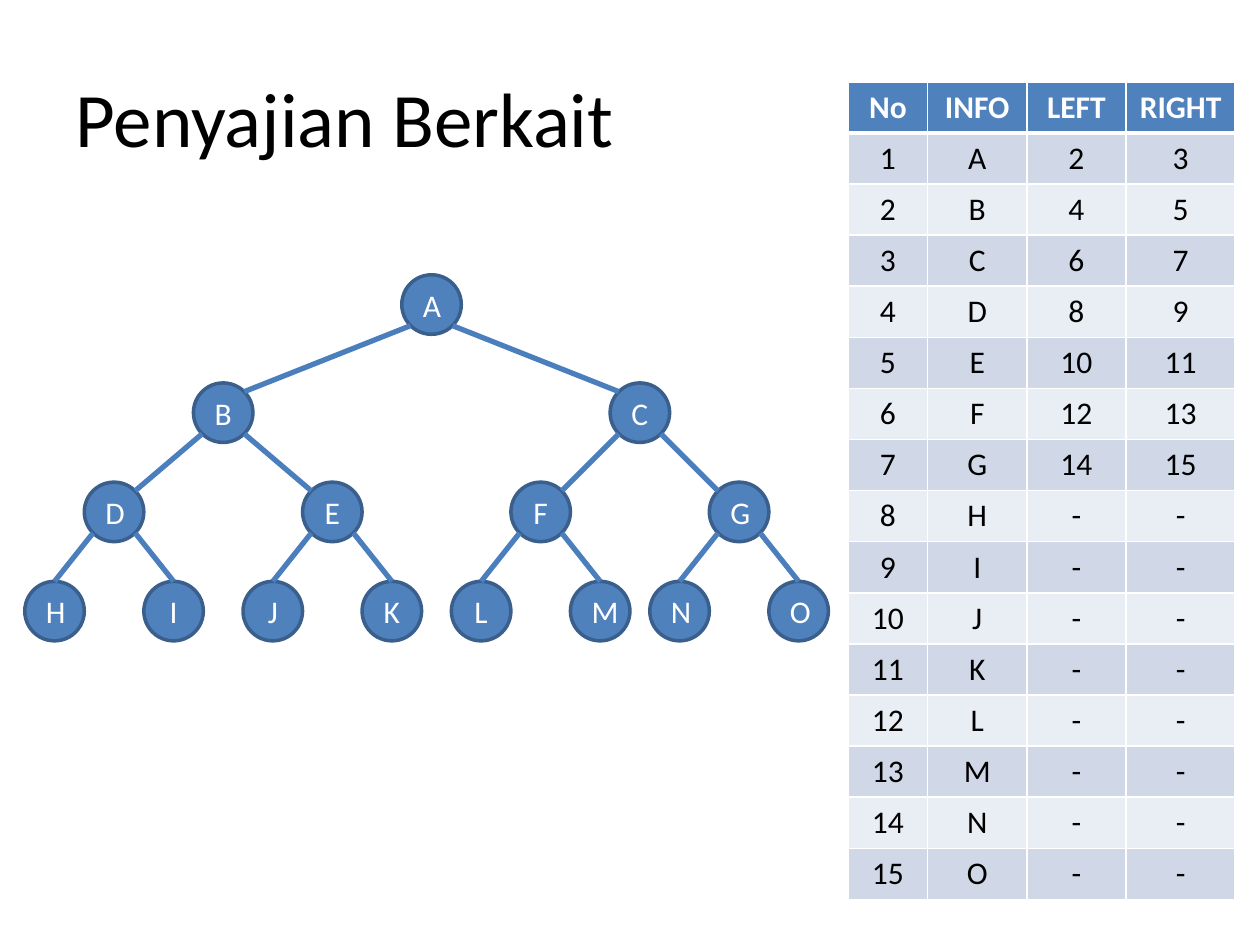
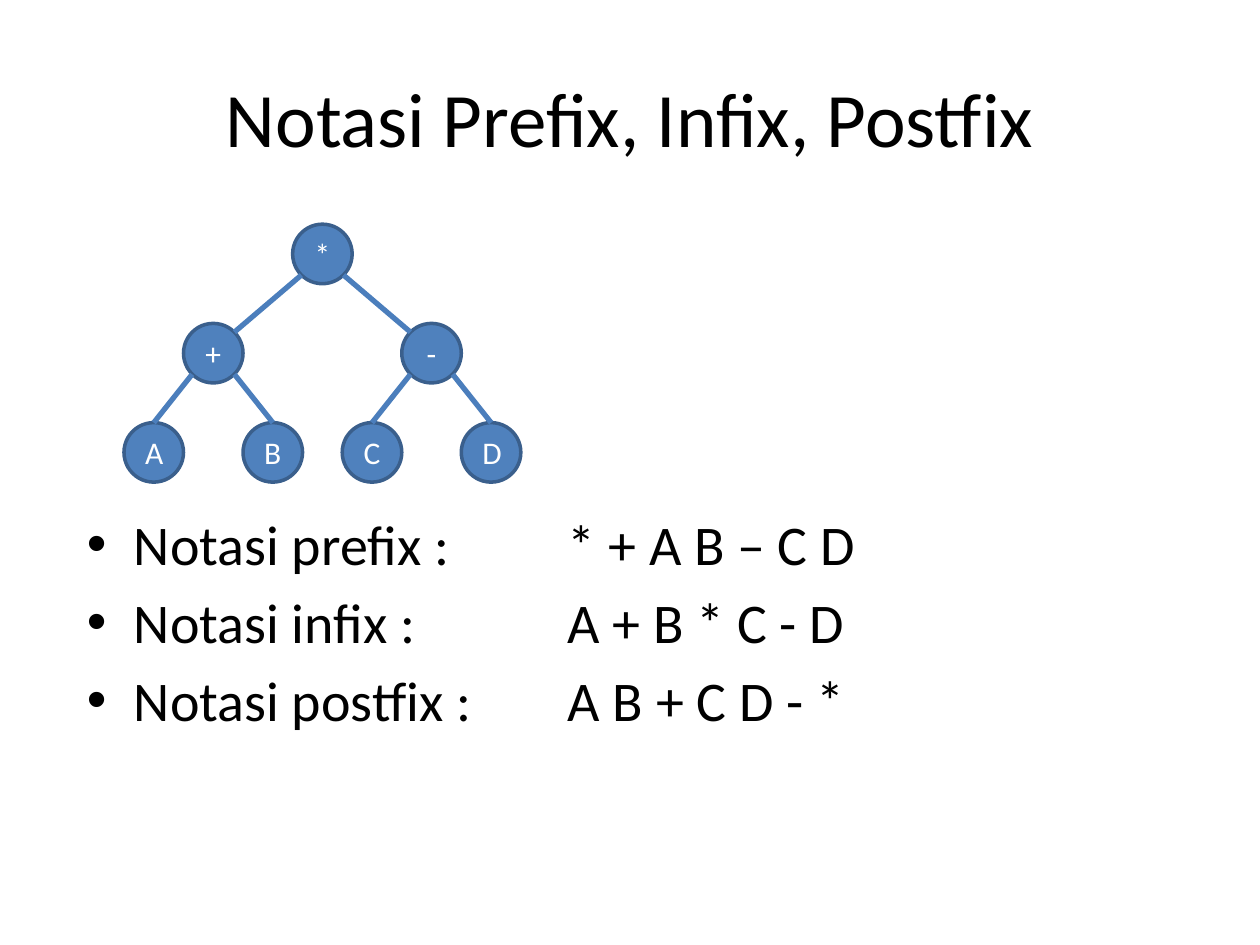
from dataclasses import dataclass

from lxml import etree
from pptx import Presentation
from pptx.dml.color import RGBColor
from pptx.enum.shapes import MSO_CONNECTOR, MSO_SHAPE
from pptx.enum.text import MSO_ANCHOR, PP_ALIGN
from pptx.oxml.ns import qn
from pptx.util import Cm, Pt

CENTER, LEFT = PP_ALIGN.CENTER, PP_ALIGN.LEFT
MIDDLE = MSO_ANCHOR.MIDDLE
ELLIPSE = MSO_SHAPE.OVAL
STRAIGHT = MSO_CONNECTOR.STRAIGHT
TITLE_ONLY = 5


@dataclass(frozen=True)
class Theme:
    font: str = "Calibri"
    ink: str = "000000"
    paper: str = "FFFFFF"
    accent: str = "4F81BD"
    node_outline: str = "3A5F8C"
    edge: str = "4B7EBC"
    row_bands: tuple = ("D0D8E8", "E9EDF4")
    title_size: int = 44
    body_size: int = 32
    label_size: int = 18


THEME = Theme()
NODE_SIZE = 1.2
LEVEL_GAP = 2
SIBLING_GAP = 2.4
DIAGONAL = NODE_SIZE / 2 * 0.71


def rgb(color):
    return RGBColor.from_string(color)


def style_text(paragraph, size, color, align=LEFT, bold=False):
    paragraph.alignment = align
    for run in paragraph.runs:
        run.font.name = THEME.font
        run.font.size = Pt(size)
        run.font.bold = bold
        run.font.color.rgb = rgb(color)


def add_titled_slide(deck, heading, align):
    slide = deck.slides.add_slide(deck.slide_layouts[TITLE_ONLY])
    title = slide.shapes.title
    title.left, title.top = Cm(1.27), Cm(0.76)
    title.width, title.height = Cm(22.86), Cm(3.18)
    title.text_frame.text = heading
    title.text_frame.vertical_anchor = MIDDLE
    style_text(title.text_frame.paragraphs[0], THEME.title_size, THEME.ink, align)
    return slide


def add_node(tree, label, x, y):
    """Draw a labelled circle centred on (x, y)."""
    radius = NODE_SIZE / 2
    node = tree.shapes.add_shape(
        ELLIPSE, Cm(x - radius), Cm(y - radius), Cm(NODE_SIZE), Cm(NODE_SIZE))
    node.shadow.inherit = False
    node.fill.solid()
    node.fill.fore_color.rgb = rgb(THEME.accent)
    node.line.color.rgb = rgb(THEME.node_outline)
    node.line.width = Pt(2)
    node.text_frame.text = label
    style_text(node.text_frame.paragraphs[0], THEME.label_size, THEME.paper, CENTER)


def add_edge(tree, parent, child, child_is_leaf):
    """Join the parent's lower diagonal to the child's top or upper diagonal."""
    (parent_x, parent_y), (child_x, child_y) = parent, child
    side = DIAGONAL if child_x > parent_x else -DIAGONAL
    if child_is_leaf:
        end_x, end_y = child_x, child_y - NODE_SIZE / 2
    else:
        end_x, end_y = child_x - side, child_y - DIAGONAL
    edge = tree.shapes.add_connector(
        STRAIGHT, Cm(end_x), Cm(end_y), Cm(parent_x + side), Cm(parent_y + DIAGONAL))
    edge.line.color.rgb = rgb(THEME.edge)
    edge.line.width = Pt(3)
    etree.SubElement(edge._element.spPr, qn("a:effectLst"))


def add_tree(slide, labels, leaf_pair_starts, level_heights):
    """Draw a full binary tree; labels run level by level from the root.

    leaf_pair_starts holds the centre of each left leaf; every parent
    stands midway between its two children.
    """
    leaf_xs = [x + step for x in leaf_pair_starts for step in (0, SIBLING_GAP)]
    levels = [leaf_xs]
    while len(levels[0]) > 1:
        below = levels[0]
        levels.insert(0, [sum(pair) / 2 for pair in zip(below[::2], below[1::2])])
    centers = [(x, y) for xs, y in zip(levels, level_heights) for x in xs]

    tree = slide.shapes.add_group_shape()
    first_leaf = len(labels) - len(leaf_xs)
    for index, (label, center) in enumerate(zip(labels, centers)):
        add_node(tree, label, *center)
        if index:
            add_edge(tree, centers[(index - 1) // 2], center, index >= first_leaf)


def set_border(cell, side, points):
    line = etree.SubElement(
        cell._tc.get_or_add_tcPr(), qn(f"a:ln{side}"), w=str(Pt(points)))
    fill = etree.SubElement(line, qn("a:solidFill"))
    etree.SubElement(fill, qn("a:srgbClr"), val=THEME.paper)


def add_link_table(slide, rows, left, top, column_widths, row_height):
    table = slide.shapes.add_table(
        len(rows), len(column_widths), Cm(left), Cm(top),
        Cm(sum(column_widths)), Cm(row_height * len(rows))).table
    for column, width in zip(table.columns, column_widths):
        column.width = Cm(width)
    for r, values in enumerate(rows):
        table.rows[r].height = Cm(row_height)
        header = r == 0
        for c, value in enumerate(values):
            cell = table.cell(r, c)
            for side in "LRTB":
                under_header = (r, side) in ((0, "B"), (1, "T"))
                set_border(cell, side, 3 if under_header else 1)
            cell.fill.solid()
            cell.fill.fore_color.rgb = rgb(
                THEME.accent if header else THEME.row_bands[(r - 1) % 2])
            cell.text_frame.text = value
            style_text(cell.text_frame.paragraphs[0], THEME.label_size,
                       THEME.paper if header else THEME.ink, CENTER, header)


def add_bullets(slide, lines, left, top, width, height, indent, tab):
    frame = slide.shapes.add_textbox(
        Cm(left), Cm(top), Cm(width), Cm(height)).text_frame
    frame.word_wrap = True
    frame.text = "\n".join(lines)
    for index, paragraph in enumerate(frame.paragraphs):
        properties = paragraph._p.get_or_add_pPr()
        properties.set("marL", str(Cm(indent)))
        properties.set("indent", str(-Cm(indent)))
        etree.SubElement(properties, qn("a:buFont"), typeface="Arial")
        etree.SubElement(properties, qn("a:buChar"), char="•")
        tabs = etree.SubElement(properties, qn("a:tabLst"))
        etree.SubElement(tabs, qn("a:tab"), pos=str(Cm(tab)), algn="l")
        if index:
            paragraph.space_before = Pt(6)
        style_text(paragraph, THEME.body_size, THEME.ink)


def linked_rows(labels):
    """List each node with the numbers of its left and right children."""
    rows = [("No", "INFO", "LEFT", "RIGHT")]
    for number, label in enumerate(labels, start=1):
        children = (2 * number, 2 * number + 1)
        links = [str(n) if n <= len(labels) else "-" for n in children]
        rows.append((str(number), label, *links))
    return rows


def build_linked_slide(deck):
    slide = add_titled_slide(deck, "Penyajian Berkait", LEFT)
    labels = "ABCDEFGHIJKLMNO"
    second_level = 8.32
    heights = [6.14] + [second_level + LEVEL_GAP * n for n in range(3)]
    add_tree(slide, labels, (1.1, 5.5, 9.7, 13.7), heights)
    add_link_table(slide, linked_rows(labels), 17.1, 1.65, (1.6, 2, 2, 2.2), 1.03)


def build_notation_slide(deck):
    slide = add_titled_slide(deck, "Notasi Prefix, Infix, Postfix", CENTER)
    notations = (
        "Notasi prefix :\t* + A B – C D",
        "Notasi infix :\tA + B * C - D",
        "Notasi postfix :\tA B + C D - *",
    )
    add_bullets(slide, notations, left=1.5, top=10.15, width=22.6, height=6.9,
                indent=0.95, tab=9.7)
    heights = [5.12 + LEVEL_GAP * n for n in range(3)]
    add_tree(slide, "*+-ABCD", (3.1, 7.5), heights)


def main():
    deck = Presentation()
    deck.slide_width, deck.slide_height = Cm(25.4), Cm(19.05)
    build_linked_slide(deck)
    build_notation_slide(deck)
    deck.save("out.pptx")


if __name__ == "__main__":
    main()
